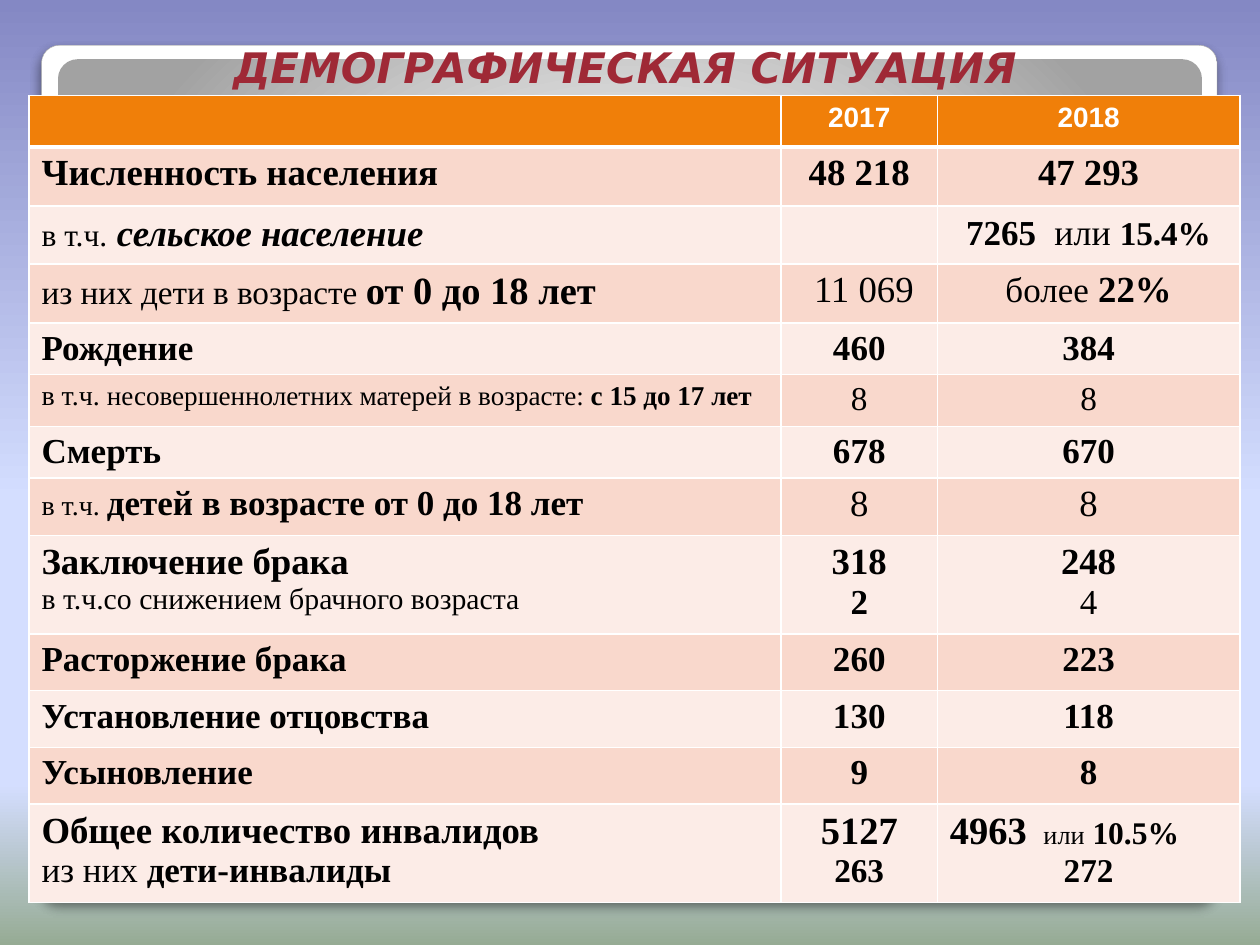
from lxml import etree
from pptx import Presentation
from pptx.dml.color import RGBColor
from pptx.enum.shapes import MSO_SHAPE
from pptx.enum.text import MSO_ANCHOR, PP_ALIGN
from pptx.oxml import parse_xml
from pptx.oxml.ns import nsdecls, qn
from pptx.util import Inches, Pt

ROUND_RECT = MSO_SHAPE.ROUNDED_RECTANGLE
LEFT, CENTER, JUSTIFY = PP_ALIGN.LEFT, PP_ALIGN.CENTER, PP_ALIGN.JUSTIFY
BOTTOM = MSO_ANCHOR.BOTTOM

HEADER, BANDS = "F07F09", ("F9D8CC", "FCECE7")
SKY = [(0, "8488C4"), (53, "D4DEFF"), (83, "D4DEFF"), (100, "96AB94")]
FRAME = [(0, "FFFFFF"), (98, "FFFFFF"), (99, "F7F7F7"), (100, "DADADA")]
PANEL = [(0, "FFFFFF"), (55, "E1E1E1"), (100, "A2A2A2")]
DOWN = '<a:lin ang="5400000" scaled="0"/>'
GLOW = ('<a:path path="circle"><a:fillToRect l="50000" t="175000" '
        'r="50000" b="-75000"/></a:path>')

COLUMNS = [5.97, 1.24, 2.4]
HEIGHTS = [0.4, 0.47, 0.46, 0.47, 0.39, 0.41, 0.39, 0.46, 0.78, 0.45, 0.45, 0.45, 0.78]


def bold(text, size):
    return text, size, True, False


def plain(text, size):
    return text, size, False, False


def bold_row(label, first, second, size=20):
    """Row with a single bold run in every cell."""
    return [[[bold(text, size)]] for text in (label, first, second)]


# Each row holds cells, each cell paragraphs, each paragraph runs
ROWS = [
    bold_row("Численность населения", "48 218", "47 293", 21),
    [[[plain("в т.ч.", 18), bold(" ", 22), ("сельское население", 21, True, True)]],
     [],
     [[bold("7265", 20), bold(" ", 21), plain(" или ", 20.5), bold("15.4%", 19)]]],
    [[[plain("из них дети в возрасте ", 19), bold("от 0 до 18 лет", 22)]],
     [[plain(" 11 069", 21)]],
     [[plain("более", 20), plain(" ", 21), bold("22%", 21)]]],
    bold_row("Рождение", "460", "384"),
    [[[plain("в т.ч. ", 16), plain("несовершеннолетних матерей в возрасте:", 15.5),
       bold(" с 15 до 17 лет", 15.5)]],
     [[plain("8", 19)]],
     [[plain("8", 19)]]],
    bold_row("Смерть", "678", "670"),
    [[[plain("в т.ч. ", 16), bold("детей в возрасте от 0 до 18 лет", 20)]],
     [[plain("8", 21)]],
     [[plain("8", 21)]]],
    [[[bold("Заключение брака", 21)], [plain("в т.ч.со снижением брачного возраста", 17)]],
     [[bold("318", 21)], [bold("2", 20)]],
     [[bold("248", 21)], [plain("4", 20)]]],
    bold_row("Расторжение брака", "260", "223"),
    bold_row("Установление отцовства", "130", "118"),
    bold_row("Усыновление", "9", "8"),
    [[[bold("Общее количество инвалидов", 21)],
      [plain("из них ", 20), bold("дети-инвалиды", 20)]],
     [[bold("5127", 22)], [bold("263", 19)]],
     [[bold("4963", 22), bold(" ", 20), plain(" ", 18), plain("или", 15),
       plain(" ", 18), bold("10.5%", 18)],
      [bold("272", 19)]]],
]


def rgb(color):
    return RGBColor.from_string(color)


def set_gradient(parent, stops, direction):
    """Replace the solid fill of parent by a gradient."""
    stop_xml = "".join(f'<a:gs pos="{pos * 1000}"><a:srgbClr val="{color}"/></a:gs>'
                       for pos, color in stops)
    gradient = parse_xml(f'<a:gradFill {nsdecls("a")} rotWithShape="1">'
                         f'<a:gsLst>{stop_xml}</a:gsLst>{direction}</a:gradFill>')
    parent.replace(parent.find(qn("a:solidFill")), gradient)


def format_run(r, size, is_bold, is_italic, font, color):
    r.font.size, r.font.name = Pt(size), font
    r.font.bold, r.font.italic = is_bold, is_italic
    r.font.color.rgb = rgb(color)


def add_rounded(slide, box, radius, stops, direction):
    sp = slide.shapes.add_shape(ROUND_RECT, *map(Inches, box))
    sp.adjustments[0] = radius
    sp.shadow.inherit = False
    sp.fill.solid()
    set_gradient(sp._element.spPr, stops, direction)
    sp.line.fill.background()
    return sp


def add_backdrop(slide, box, panel_height, panel_radius):
    """White frame with a soft shadow and a grey panel inside it."""
    left, top, width, _ = box
    frame = add_rounded(slide, box, 0.021, FRAME, DOWN)
    frame.line.color.rgb = rgb("A4A4A4")
    frame.line.width = Pt(0.16)
    effects = frame._element.spPr.find(qn("a:effectLst"))
    shadow = etree.SubElement(effects, qn("a:outerShdw"), blurRad=str(Pt(6)),
                              dist=str(Pt(4)), dir="5400000", rotWithShape="0")
    color = etree.SubElement(shadow, qn("a:srgbClr"), val="000000")
    etree.SubElement(color, qn("a:alpha"), val="25000")
    panel = (left + 0.13, top + 0.11, width - 0.25, panel_height)
    add_rounded(slide, panel, panel_radius, PANEL, GLOW)


def add_title(slide, box):
    title = slide.shapes.title
    title.left, title.top, title.width, title.height = map(Inches, box)
    tf = title.text_frame
    tf.text = "ДЕМОГРАФИЧЕСКАЯ СИТУАЦИЯ"
    tf.word_wrap, tf.vertical_anchor = True, BOTTOM
    tf.margin_left = tf.margin_right = tf.margin_top = tf.margin_bottom = Inches(0.05)
    p = tf.paragraphs[0]
    p.alignment = CENTER
    format_run(p.runs[0], 24, True, True, "DejaVu Sans", "9F2936")
    slide.shapes._spTree.append(title._element)  # in front of the backdrop


def set_borders(cell, top, bottom):
    tc_pr = cell._tc.get_or_add_tcPr()
    for side, width in (("L", 1), ("R", 1), ("T", top), ("B", bottom)):
        ln = etree.SubElement(tc_pr, qn(f"a:ln{side}"), w=str(Pt(width)))
        fill = etree.SubElement(ln, qn("a:solidFill"))
        etree.SubElement(fill, qn("a:srgbClr"), val="FFFFFF")


def fill_cell(cell, paragraphs, align, font, color):
    tf = cell.text_frame
    for i, runs in enumerate(paragraphs):
        p = tf.add_paragraph() if i else tf.paragraphs[0]
        p.alignment = align
        for text, *style in runs:
            r = p.add_run()
            r.text = text
            format_run(r, *style, font, color)


def add_table(slide, box):
    header = [[], [[bold("2017", 16)]], [[bold("2018", 16)]]]
    rows = [header] + ROWS
    table = slide.shapes.add_table(len(rows), len(COLUMNS), *map(Inches, box)).table
    table.first_row = table.horz_banding = False
    for column, width in zip(table.columns, COLUMNS):
        column.width = Inches(width)
    for i, (row, height) in enumerate(zip(rows, HEIGHTS)):
        table.rows[i].height = Inches(height)
        font, color = ("Times New Roman", "000000") if i else ("Arial", "FFFFFF")
        for j, paragraphs in enumerate(row):
            cell = table.cell(i, j)
            set_borders(cell, 3 if i == 1 else 1, 3 if i == 0 else 1)
            cell.fill.solid()
            cell.fill.fore_color.rgb = rgb(BANDS[(i - 1) % 2] if i else HEADER)
            fill_cell(cell, paragraphs, CENTER if j else LEFT, font, color)
    # The long total with its share is justified
    table.cell(len(rows) - 1, 2).text_frame.paragraphs[0].alignment = JUSTIFY


def main():
    prs = Presentation()
    prs.slide_width, prs.slide_height = Inches(10), Inches(7.5)
    slide = prs.slides.add_slide(prs.slide_layouts[0])
    subtitle = slide.placeholders[1]._element
    subtitle.getparent().remove(subtitle)

    # Background
    slide.background.fill.solid()
    set_gradient(slide._element.find(".//" + qn("p:bgPr")), SKY, DOWN)

    # Two stacked backdrops, the front one with a shorter panel
    for panel_height, panel_radius in ((6, 0.021), (3.4, 0.046)):
        add_backdrop(slide, (0.33, 0.36, 9.33, 6.78), panel_height, panel_radius)

    add_title(slide, (0.31, 0.16, 9.3, 0.62))
    add_table(slide, (0.23, 0.76, sum(COLUMNS), sum(HEIGHTS)))
    prs.save("out.pptx")


if __name__ == "__main__":
    main()
